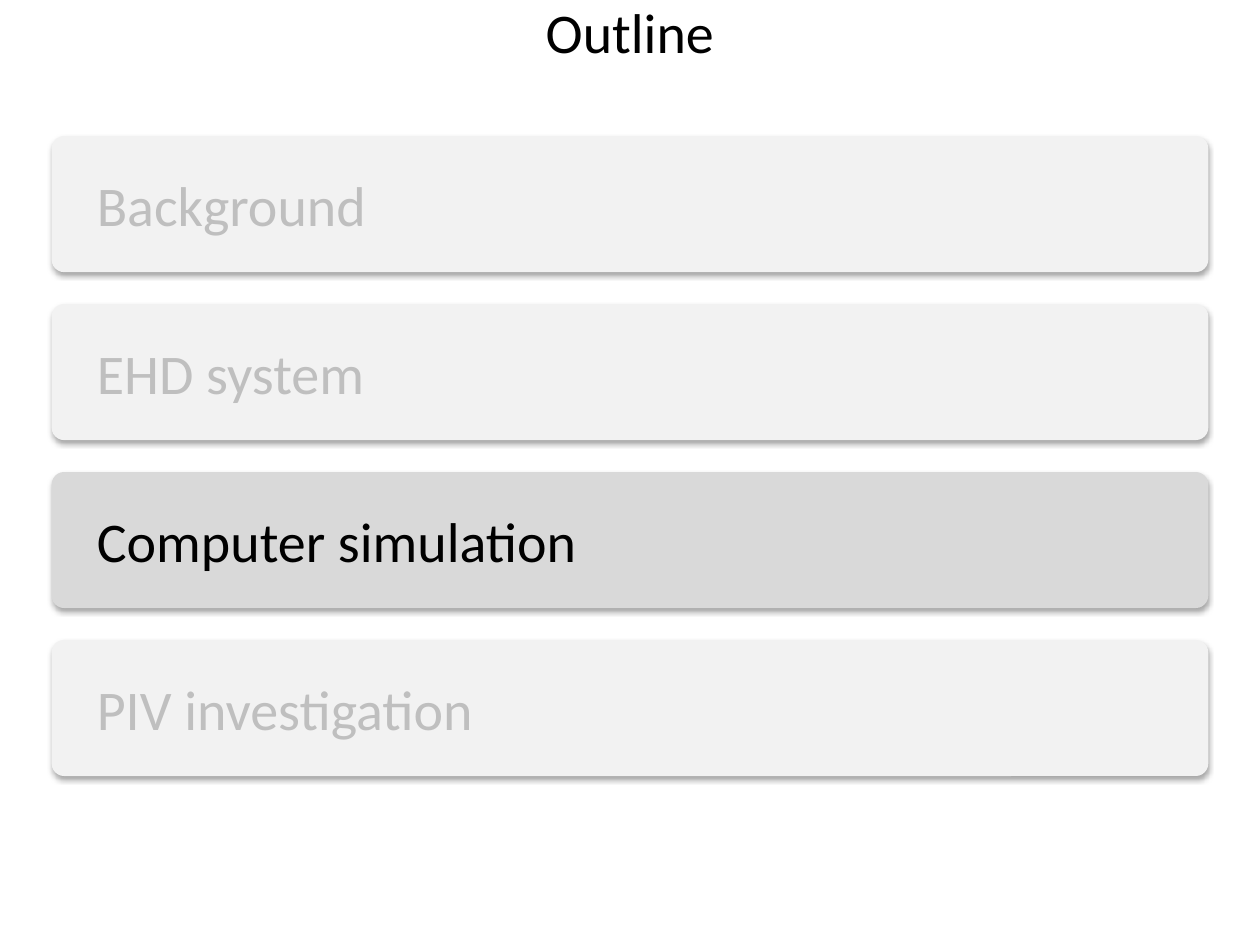
from lxml import etree
from pptx import Presentation
from pptx.dml.color import RGBColor
from pptx.enum.shapes import MSO_SHAPE
from pptx.enum.text import MSO_ANCHOR, MSO_AUTO_SIZE, PP_ALIGN
from pptx.oxml.ns import qn
from pptx.util import Inches, Pt

ROUNDED = MSO_SHAPE.ROUNDED_RECTANGLE
MIDDLE = MSO_ANCHOR.MIDDLE
FIT_SHAPE = MSO_AUTO_SIZE.SHAPE_TO_FIT_TEXT
CENTER, LEFT = PP_ALIGN.CENTER, PP_ALIGN.LEFT

BLACK = RGBColor(0x00, 0x00, 0x00)
FADED_TEXT = RGBColor(0xBF, 0xBF, 0xBF)
FADED_BAR = RGBColor(0xF2, 0xF2, 0xF2)
CURRENT_BAR = RGBColor(0xD9, 0xD9, 0xD9)

SLIDE_WIDTH, SLIDE_HEIGHT = 10, 7.5
BAR_LEFT, BAR_TOP = 0.41, 1.08
BAR_WIDTH, BAR_HEIGHT = SLIDE_WIDTH - 2 * BAR_LEFT, 1.08
BAR_PITCH = 1.333
LABEL_INDENT, LABEL_HEIGHT = 0.26, 0.64

# Each topic with the width of its label
TOPICS = [
    ("Background", 2.36),
    ("EHD system", 2.34),
    ("Computer simulation", 4.05),
    ("PIV investigation", 3.22),
]
CURRENT_TOPIC = "Computer simulation"


def add_text(shapes, text, box, color, align=LEFT):
    frame = shapes.add_textbox(*map(Inches, box)).text_frame
    frame.vertical_anchor = MIDDLE
    line = frame.paragraphs[0]
    line.text = text
    line.alignment = align
    line.font.name = "Calibri"
    line.font.size = Pt(32)
    line.font.color.rgb = color
    return frame


def add_soft_shadow(shape):
    """Cast a blurred black shadow straight down."""
    shape.shadow.inherit = False
    effects = shape.element.spPr.find(qn("a:effectLst"))
    shadow = etree.SubElement(
        effects, qn("a:outerShdw"), blurRad=str(Pt(3.1)), dist=str(Pt(1.8)),
        dir="5400000", rotWithShape="0")
    black = etree.SubElement(shadow, qn("a:srgbClr"), val=str(BLACK))
    etree.SubElement(black, qn("a:alpha"), val="35000")


def add_topic(slide, row, topic, label_width):
    is_current = topic == CURRENT_TOPIC
    top = BAR_TOP + row * BAR_PITCH
    group = slide.shapes.add_group_shape()

    bar = group.shapes.add_shape(
        ROUNDED, *map(Inches, (BAR_LEFT, top, BAR_WIDTH, BAR_HEIGHT)))
    bar.adjustments[0] = 0.092
    bar.fill.solid()
    bar.fill.fore_color.rgb = CURRENT_BAR if is_current else FADED_BAR
    bar.line.fill.background()
    add_soft_shadow(bar)

    label_top = top + (BAR_HEIGHT - LABEL_HEIGHT) / 2
    label = add_text(
        group.shapes, topic,
        (BAR_LEFT + LABEL_INDENT, label_top, label_width, LABEL_HEIGHT),
        BLACK if is_current else FADED_TEXT)
    label.word_wrap = False
    label.auto_size = FIT_SHAPE


def add_title(slide, text):
    margin = 0.05 * SLIDE_WIDTH
    title = add_text(slide.shapes, text,
                     (margin, 0, SLIDE_WIDTH - 2 * margin, SLIDE_HEIGHT / 15),
                     BLACK, CENTER)
    title.word_wrap = True


def main():
    deck = Presentation()
    deck.slide_width = Inches(SLIDE_WIDTH)
    deck.slide_height = Inches(SLIDE_HEIGHT)
    slide = deck.slides.add_slide(deck.slide_layouts[6])
    add_title(slide, "Outline")
    for row, (topic, label_width) in enumerate(TOPICS):
        add_topic(slide, row, topic, label_width)
    deck.save("out.pptx")


if __name__ == "__main__":
    main()
